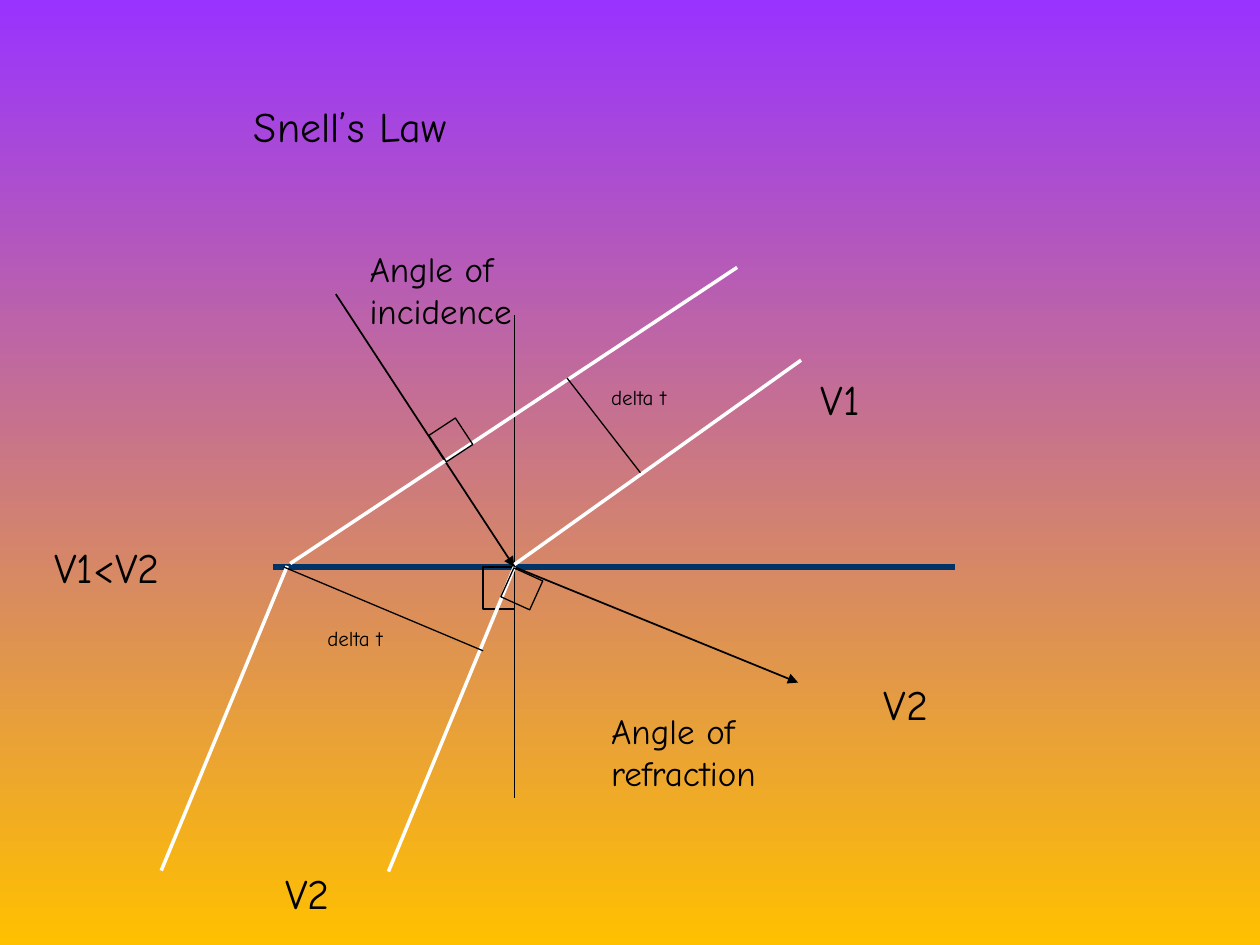
from lxml import etree
from pptx import Presentation
from pptx.dml.color import RGBColor
from pptx.enum.shapes import MSO_CONNECTOR, MSO_SHAPE
from pptx.oxml.ns import qn
from pptx.util import Cm, Pt

STRAIGHT = MSO_CONNECTOR.STRAIGHT
RECTANGLE = MSO_SHAPE.RECTANGLE
VIOLET = RGBColor(0x99, 0x33, 0xFF)
GOLD = RGBColor(0xFF, 0xC0, 0x00)
NAVY = RGBColor(0x00, 0x33, 0x66)
BLACK = RGBColor(0x00, 0x00, 0x00)
WHITE = RGBColor(0xFF, 0xFF, 0xFF)
FONT = "Comic Neue"


def draw_line(page, ends, color, width, arrow=False):
    """Draw a line through ends (x1, y1, x2, y2 in cm), with an optional arrowhead at its end."""
    line = page.shapes.add_connector(STRAIGHT, *[Cm(value) for value in ends])
    line.line.color.rgb = color
    line.line.width = Pt(width)
    if arrow:
        etree.SubElement(line.line._get_or_add_ln(), qn("a:tailEnd"), type="triangle")
    etree.SubElement(line._element.spPr, qn("a:effectLst"))


def draw_right_angle(page, left, top, width, height, rotation=0):
    mark = page.shapes.add_shape(RECTANGLE, Cm(left), Cm(top), Cm(width), Cm(height))
    mark.rotation = rotation
    mark.shadow.inherit = False
    mark.fill.background()
    mark.line.color.rgb = BLACK
    mark.line.width = Pt(0.75)


deck = Presentation()
deck.slide_width = Cm(25.4)
deck.slide_height = Cm(19.05)
page = deck.slides.add_slide(deck.slide_layouts[6])

backdrop = page.background.fill
backdrop.gradient()
backdrop.gradient_angle = 270
for stop, color in zip(backdrop.gradient_stops, (VIOLET, GOLD)):
    stop.color.rgb = color

# Boundary between the two media, the rays and the normal
hit_x, boundary_y = 10.37, 11.43
draw_line(page, (5.51, boundary_y, 19.26, boundary_y), NAVY, 3)
draw_line(page, (6.77, 5.93, hit_x, boundary_y), BLACK, 1, arrow=True)
draw_line(page, (hit_x, boundary_y, 16.09, 13.76), BLACK, 1, arrow=True)
draw_line(page, (hit_x, 6.35, hit_x, 16.09), BLACK, 0.75)
draw_right_angle(page, 9.74, boundary_y, 0.64, 0.85)

wavefronts = [
    (7.83, 17.57, hit_x, boundary_y),
    (5.85, 11.36, 14.86, 5.39),
    (hit_x, 11.38, 16.15, 7.26),
    (3.25, 17.55, 5.79, 11.41),
]
for ends in wavefronts:
    draw_line(page, ends, WHITE, 2)

draw_right_angle(page, 8.77, 8.55, 0.64, 0.64, 326.7)
draw_right_angle(page, 10.2, 11.55, 0.64, 0.64, 294.3)

time_steps = [(5.72, boundary_y, 9.74, 13.12), (11.43, 7.62, 12.91, 9.53)]
for ends in time_steps:
    draw_line(page, ends, BLACK, 0.75)

# Text, left, top, width, height, font size
labels = [
    ("Snell’s Law", 4.87, 1.91, 13.76, 1.28, 24),
    ("V1", 16.3, 7.41, 2.96, 1.28, 24),
    ("V2", 17.57, 13.55, 2.96, 1.28, 24),
    ("V1<V2", 0.85, 10.8, 2.96, 1.28, 24),
    ("V2", 5.5, 17.36, 2.96, 1.28, 24),
    ("Angle of incidence", 7.2, 4.87, 4.87, 1.96, 20),
    ("Angle of refraction", 12.07, 14.18, 4.87, 1.96, 20),
    ("delta t", 6.35, 12.49, 2.33, 0.77, 12),
    ("delta t", 12.07, 7.62, 2.33, 0.77, 12),
]
for text, left, top, width, height, size in labels:
    box = page.shapes.add_textbox(Cm(left), Cm(top), Cm(width), Cm(height))
    box.text_frame.word_wrap = True
    box.text_frame.text = text
    span = box.text_frame.paragraphs[0].runs[0]
    span.font.name = FONT
    span.font.size = Pt(size)
    span.font.color.rgb = BLACK

deck.save("out.pptx")
